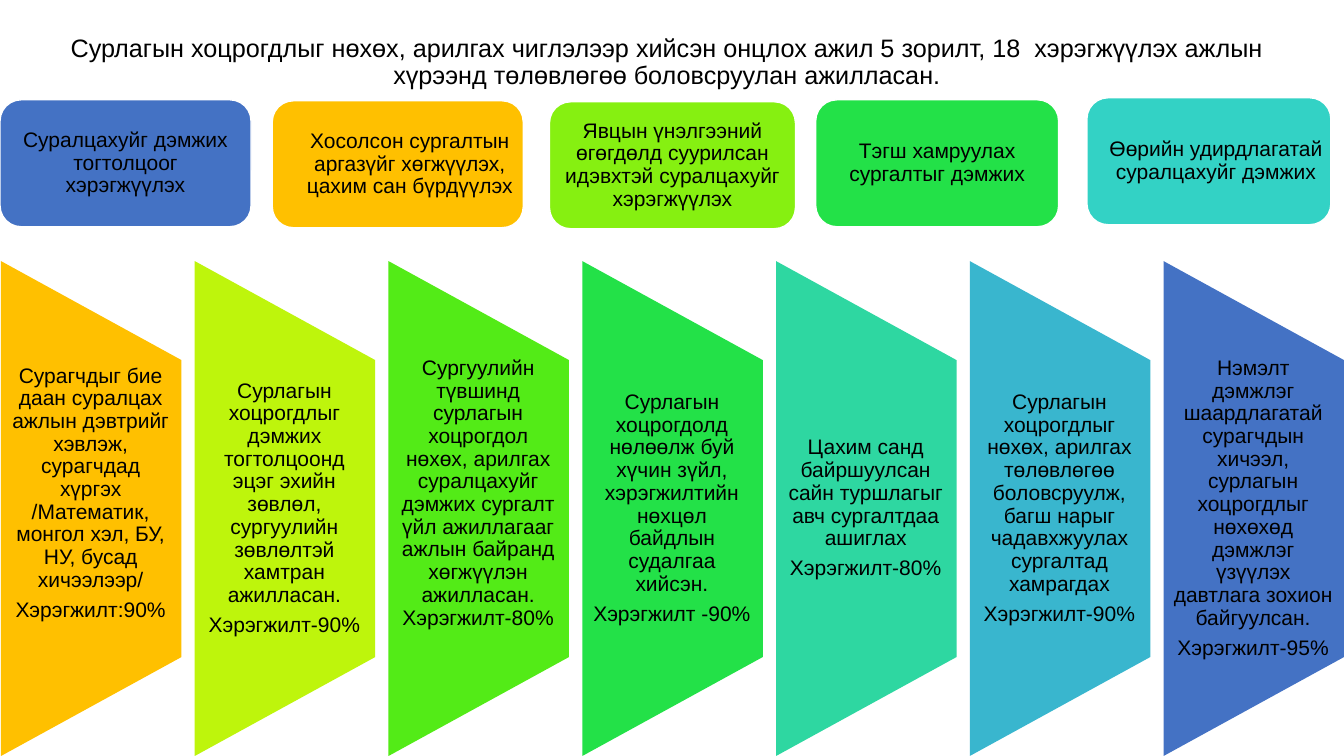
from pptx import Presentation
from pptx.dml.color import RGBColor
from pptx.enum.shapes import MSO_SHAPE
from pptx.enum.text import MSO_ANCHOR, PP_ALIGN
from pptx.util import Inches, Pt

MIDDLE = MSO_ANCHOR.MIDDLE
CENTER = PP_ALIGN.CENTER
ROUNDED = MSO_SHAPE.ROUNDED_RECTANGLE
TRAPEZOID = MSO_SHAPE.FLOWCHART_MANUAL_OPERATION

WIDTH, HEIGHT = 13.33, 7.5
COLORS = {
    "text": "000000", "white": "FFFFFF", "blue": "4472C4", "amber": "FFC000",
    "lime": "BEF50C", "grass": "53EB17", "spring": "86F011", "green": "23E148",
    "mint": "2ED7A1", "turquoise": "33D2C5", "sky": "39B6CE",
}
TITLE = ("Сурлагын хоцрогдлыг нөхөх, арилгах чиглэлээр хийсэн онцлох ажил 5 зорилт, "
         "18  хэрэгжүүлэх ажлын хүрээнд төлөвлөгөө боловсруулан ажилласан.")

# Goal: left, top, width, left and width of its text, color, wording
GOALS = [
    (0, 0.99, 2.49, 0.06, 2.37, "blue", "Суралцахуйг дэмжих тогтолцоог хэрэгжүүлэх"),
    (2.7, 1, 2.49, 2.88, 2.37, "amber",
     "Хосолсон сургалтын аргазүйг хөгжүүлэх, цахим сан бүрдүүлэх"),
    (5.45, 1.01, 2.44, 5.51, 2.32, "spring",
     "Явцын үнэлгээний өгөгдөлд суурилсан идэвхтэй суралцахуйг хэрэгжүүлэх"),
    (8.09, 0.99, 2.41, 8.16, 2.27, "green", "Тэгш хамруулах сургалтыг дэмжих"),
    (10.78, 0.97, 2.42, 10.85, 2.42, "turquoise",
     "Өөрийн удирдлагатай суралцахуйг дэмжих"),
]

# Activity: color, upward shift of its text, paragraphs
ACTIVITIES = [
    ("amber", 0.15, ["Сурагчдыг бие даан суралцах ажлын дэвтрийг хэвлэж, сурагчдад хүргэх "
                     "/Математик, монгол хэл, БУ, НУ, бусад хичээлээр/", "Хэрэгжилт:90%"]),
    ("lime", 0, ["Сурлагын хоцрогдлыг дэмжих тогтолцоонд эцэг эхийн зөвлөл, сургуулийн "
                 "зөвлөлтэй хамтран ажилласан.", "Хэрэгжилт-90%"]),
    ("grass", 0.15, ["Сургуулийн түвшинд сурлагын хоцрогдол нөхөх, арилгах суралцахуйг дэмжих "
                     "сургалт үйл ажиллагааг ажлын байранд хөгжүүлэн ажилласан. "
                     "Хэрэгжилт-80%"]),
    ("green", 0, ["Сурлагын хоцрогдолд нөлөөлж буй хүчин зүйл, хэрэгжилтийн нөхцөл байдлын "
                  "судалгаа хийсэн.", "Хэрэгжилт -90%"]),
    ("mint", 0, ["Цахим санд байршуулсан сайн туршлагыг авч сургалтдаа ашиглах",
                 "Хэрэгжилт-80%"]),
    ("sky", 0, ["Сурлагын хоцрогдлыг нөхөх, арилгах төлөвлөгөө боловсруулж, багш нарыг "
                "чадавхжуулах сургалтад хамрагдах", "Хэрэгжилт-90%"]),
    ("blue", 0, ["Нэмэлт дэмжлэг шаардлагатай сурагчдын хичээл, сурлагын хоцрогдлыг нөхөхөд "
                 "дэмжлэг үзүүлэх давтлага зохион байгуулсан.", "Хэрэгжилт-95%"]),
]


def color(name):
    """Return the named color."""
    return RGBColor.from_string(COLORS[name])


def add_text(page, box, paragraphs, size=15, insets=(0, 0, 0, 0), after=5.25):
    """Write centred paragraphs in a box given as left, top, width, height."""
    frame = page.shapes.add_textbox(*map(Inches, box)).text_frame
    frame.word_wrap = True
    frame.vertical_anchor = MIDDLE
    (frame.margin_left, frame.margin_top,
     frame.margin_right, frame.margin_bottom) = map(Inches, insets)
    for index, text in enumerate(paragraphs):
        para = frame.add_paragraph() if index else frame.paragraphs[0]
        para.alignment = CENTER
        para.line_spacing = 0.9
        para.space_after = Pt(after)
        span = para.add_run()
        span.text = text
        span.font.name = "Arial"
        span.font.size = Pt(size)
        span.font.color.rgb = color("text")


def add_block(page, kind, box, fill, outline=None):
    """Draw a filled preset shape without a shadow."""
    block = page.shapes.add_shape(kind, *map(Inches, box))
    block.shadow.inherit = False
    block.fill.solid()
    block.fill.fore_color.rgb = color(fill)
    if outline:
        block.line.color.rgb = color(outline)
        block.line.width = Pt(1)
    else:
        block.line.fill.background()
    return block


def add_goals(page, height, pad):
    """Place the row of rounded goals with their wording."""
    for left, top, width, text_left, text_width, fill, text in GOALS:
        add_block(page, ROUNDED, (left, top, width, height), fill, outline="white")
        add_text(page, (text_left, top + pad, text_width, height - 2 * pad), [text],
                 insets=(pad,) * 4)


def add_activities(page, box, column_width):
    """Spread the sideways trapezoids evenly over the box."""
    left, top, width, height = box
    pitch = (width - column_width) / (len(ACTIVITIES) - 1)
    for index, (fill, lift, paragraphs) in enumerate(ACTIVITIES):
        column = left + index * pitch
        turned = (column + (column_width - height) / 2,
                  top + (height - column_width) / 2, height, column_width)
        add_block(page, TRAPEZOID, turned, fill).rotation = 270
        add_text(page, (column, top + height / 5 - lift, column_width, height * 3 / 5),
                 paragraphs, insets=(0.1, 0, 0.11, 0))


def main():
    """Build and save the slide."""
    deck = Presentation()
    deck.slide_width, deck.slide_height = Inches(WIDTH), Inches(HEIGHT)
    page = deck.slides.add_slide(deck.slide_layouts[6])
    add_text(page, (0.33, 0.32, 12.57, 0.6), [TITLE], size=18,
             insets=(0.1, 0, 0.1, 0), after=0)
    add_activities(page, (0.01, 2.59, WIDTH - 0.01, 4.91), 1.79)
    add_goals(page, 1.26, 0.06)
    deck.save("out.pptx")


if __name__ == "__main__":
    main()
